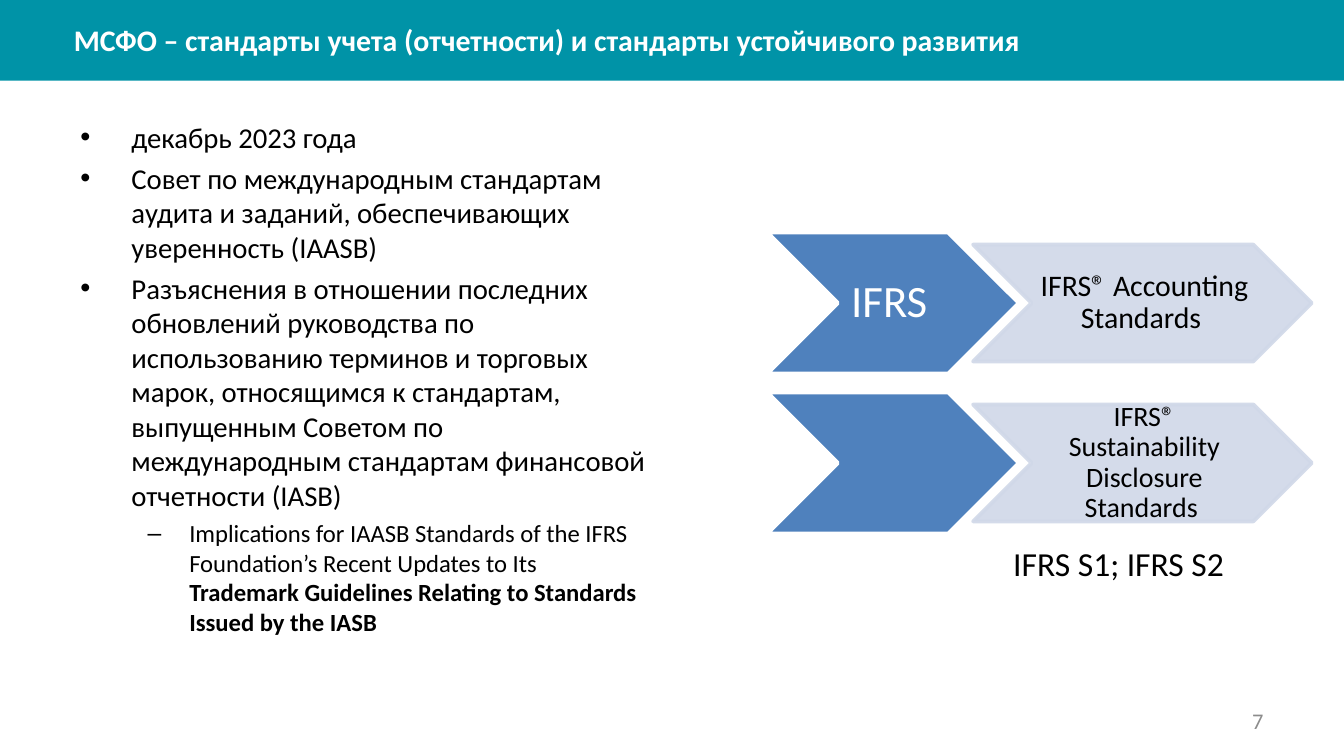
from lxml.etree import SubElement
from pptx import Presentation
from pptx.dml.color import RGBColor
from pptx.enum.shapes import MSO_SHAPE as Shape
from pptx.enum.text import MSO_ANCHOR as Anchor, MSO_AUTO_SIZE as AutoSize, PP_ALIGN as Align
from pptx.oxml.ns import qn
from pptx.util import Inches, Pt

FONT = "Calibri"
TEAL, BLUE, PALE = "0093A7", "4F81BD", "D0D8E8"
WHITE, BLACK, GREY = "FFFFFF", "000000", "8C8C8C"
TITLE = "МСФО – стандарты учета (отчетности) и стандарты устойчивого развития"
LEVELS = [
    {"bullet": "•", "size": 15.4, "left": 0.38, "hang": 0.38},
    {"bullet": "–", "size": 13.2, "left": 0.81, "hang": 0.31},
]
POINTS = [
    (0, [("декабрь 2023 года", False)]),
    (0, [("Совет по международным стандартам аудита и заданий, "
          "обеспечивающих уверенность (IAASB)", False)]),
    (0, [("Разъяснения в отношении последних обновлений руководства по "
          "использованию терминов и торговых марок, относящимся к стандартам, "
          "выпущенным Советом по международным стандартам финансовой "
          "отчетности (IASB)", False)]),
    (1, [("Implications for IAASB Standards of the IFRS Foundation’s Recent "
          "Updates to Its ", False),
         ("Trademark Guidelines Relating to Standards Issued by the IASB", True)]),
]
CHEVRON_ROWS = [
    ("IFRS ", "IFRS® Accounting Standards ", 16),
    ("", "IFRS® Sustainability Disclosure Standards ", 15),
]
ROW_TOP, ROW_STEP = 1.73, 1.19
HEAD_LEFT, HEAD_WIDTH, HEAD_HEIGHT = 5.71, 1.87, 1.05
ITEM_LEFT, ITEM_WIDTH, ITEM_HEIGHT = 7.24, 2.52, 0.87
HEAD_LABEL = (6.23, 0.83)
ITEM_LABEL = (7.68, 1.65)


def color(value):
    return RGBColor.from_string(value)


def style(span, size, ink, bold=False):
    span.font.name = FONT
    span.font.size = Pt(size)
    span.font.bold = bold
    span.font.color.rgb = color(ink)


def write(frame, text, size, ink, align=Align.LEFT, bold=False):
    frame.text = text
    para = frame.paragraphs[0]
    para.alignment = align
    for span in para.runs:
        style(span, size, ink, bold)


def add_box(page, left, top, width, height):
    box = page.shapes.add_textbox(Inches(left), Inches(top), Inches(width), Inches(height))
    box.text_frame.word_wrap = True
    return box


def add_block(page, kind, left, top, width, height, fill):
    block = page.shapes.add_shape(kind, Inches(left), Inches(top), Inches(width), Inches(height))
    block.shadow.inherit = False
    block.fill.solid()
    block.fill.fore_color.rgb = color(fill)
    block.line.fill.background()
    return block


def set_alpha(shape, percent):
    for tone in shape._element.spPr.iter(qn("a:srgbClr")):
        SubElement(tone, qn("a:alpha")).set("val", str(percent * 1000))


def add_chevron(page, left, top, width, height, fill, edge):
    chevron = add_block(page, Shape.CHEVRON, left, top, width, height, fill)
    chevron.line.color.rgb = color(edge)
    chevron.line.width = Pt(2)
    return chevron


def add_label(page, place, top, height, text, size, ink):
    left, width = place
    frame = add_box(page, left, top, width, height).text_frame
    frame.vertical_anchor = Anchor.MIDDLE
    frame.margin_left = Inches(0.02)
    frame.margin_right = 0
    frame.margin_top = frame.margin_bottom = Inches(0.01)
    write(frame, text, size, ink, Align.CENTER)
    frame.paragraphs[0].line_spacing = 0.9


def add_points(page):
    frame = add_box(page, 0.5, 0.84, 4.42, 3.94).text_frame
    for index, (depth, parts) in enumerate(POINTS):
        level = LEVELS[depth]
        para = frame.add_paragraph() if index else frame.paragraphs[0]
        para.level = depth
        para.space_before = Pt(level["size"] * 0.23 if index else 0)
        settings = para._p.get_or_add_pPr()
        settings.set("marL", str(Inches(level["left"])))
        settings.set("indent", str(-Inches(level["hang"])))
        SubElement(settings, qn("a:buFont")).set("typeface", "Arial")
        SubElement(settings, qn("a:buChar")).set("char", level["bullet"])
        for text, bold in parts:
            span = para.add_run()
            span.text = text
            style(span, level["size"], BLACK, bold)


def main():
    deck = Presentation()
    deck.slide_width = Inches(10)
    deck.slide_height = deck.slide_width * 9 // 16
    page = deck.slides.add_slide(deck.slide_layouts[5])

    banner = add_block(page, Shape.RECTANGLE, 0, 0, 10, 0.6, TEAL)
    title = page.shapes.title
    title._element.addprevious(banner._element)
    title.left, title.top, title.width, title.height = map(Inches, (0.45, 0.11, 9, 0.37))
    title.text_frame.vertical_anchor = Anchor.MIDDLE
    write(title.text_frame, TITLE, 16, WHITE, bold=True)

    add_points(page)

    for row, (head, item, size) in enumerate(CHEVRON_ROWS):
        top = ROW_TOP + row * ROW_STEP
        item_top = top + (HEAD_HEIGHT - ITEM_HEIGHT) / 2
        add_chevron(page, HEAD_LEFT, top, HEAD_WIDTH, HEAD_HEIGHT, BLUE, WHITE)
        if head:
            add_label(page, HEAD_LABEL, top, HEAD_HEIGHT, head, 24, WHITE)
        pale = add_chevron(page, ITEM_LEFT, item_top, ITEM_WIDTH, ITEM_HEIGHT, PALE, PALE)
        set_alpha(pale, 90)
        add_label(page, ITEM_LABEL, item_top, ITEM_HEIGHT, item, size, BLACK)

    examples = add_box(page, 7.44, 3.99, 1.79, 0.4).text_frame
    examples.word_wrap = False
    examples.auto_size = AutoSize.SHAPE_TO_FIT_TEXT
    write(examples, "IFRS S1; IFRS S2", 18, BLACK)

    number = add_box(page, 7.17, 5.21, 2.33, 0.3).text_frame
    number.vertical_anchor = Anchor.MIDDLE
    write(number, "7", 12, GREY, Align.RIGHT)

    deck.save("out.pptx")


if __name__ == "__main__":
    main()
